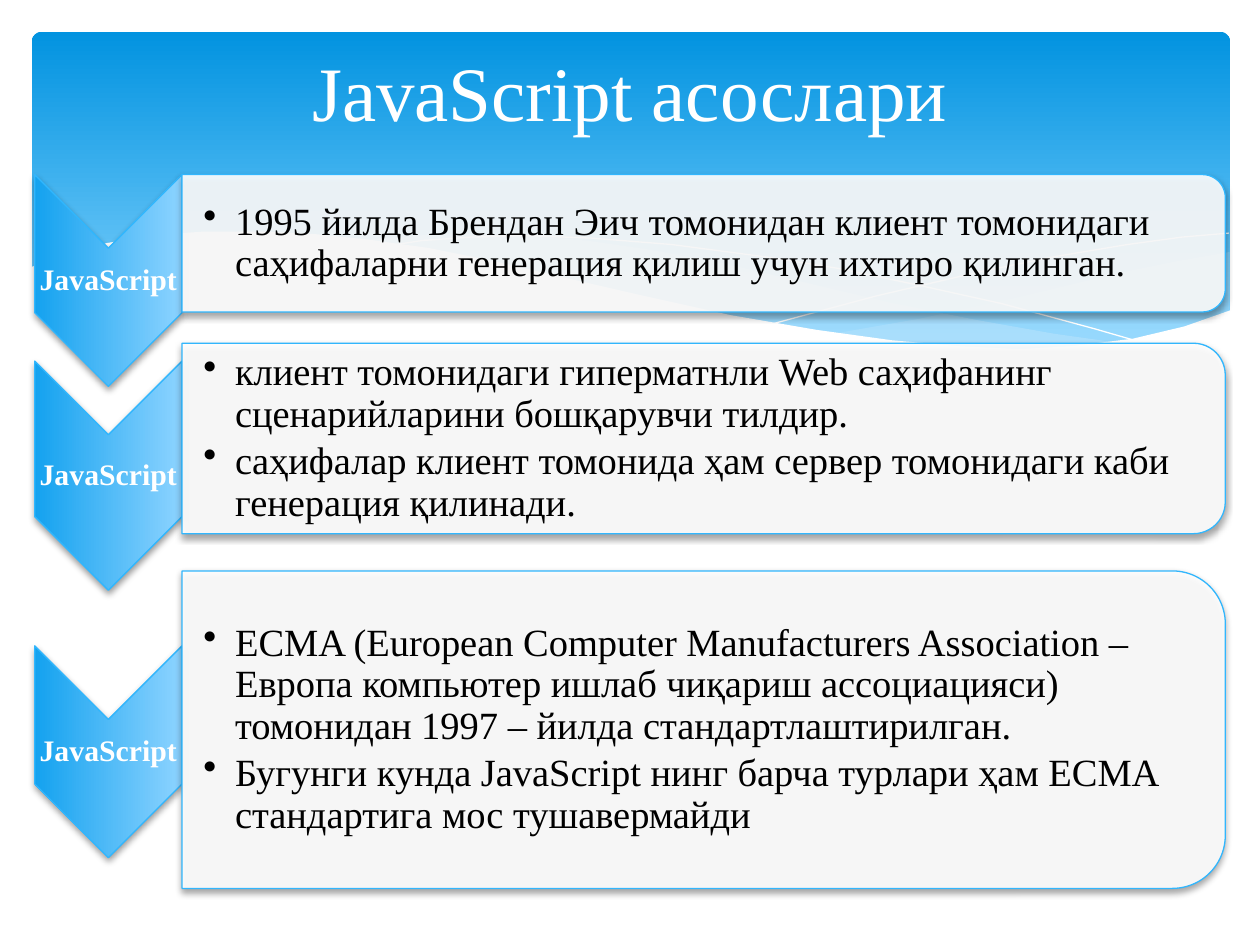
from dataclasses import dataclass

from lxml import etree
from pptx import Presentation
from pptx import util as u
from pptx.dml.color import RGBColor
from pptx.enum import shapes, text
from pptx.oxml.ns import qn

Cm, Pt = u.Cm, u.Pt


@dataclass(frozen=True)
class Theme:
    font: str = "Times New Roman"
    white: str = "FFFFFF"
    black: str = "000000"
    accent: str = "31B6FD"
    mist: str = "C6E7FC"
    banner: tuple = ("0293E0", "83D3FE")
    arrow: tuple = ("8CD3FF", "14A2EF")
    title_pt: int = 44
    body_pt: int = 22
    label_pt: int = 17


T = Theme()

# Banner curves, in tenths of a millimetre
RIGHT_CREST = [
    (2479, 508), (2375, 526), (2263, 549), (2045, 602), (1852, 643),
    (1679, 673), (1791, 688), (1923, 701), (2068, 706), (2192, 698),
    (2299, 683), (2393, 658), (2479, 627)]
MIDDLE_CREST = [
    (2268, 693), (2126, 673), (1968, 645), (1793, 610), (1598, 564),
    (1445, 528), (1306, 503), (1181, 485), (1067, 475), (917, 470),
    (795, 478), (726, 485), (869, 505), (1026, 536), (1247, 589),
    (1438, 630), (1610, 663), (1765, 686), (1933, 704), (2078, 706),
    (2177, 704)]
FALLING_LINE = [
    (785, 495), (851, 485), (950, 478), (1057, 475), (1191, 480),
    (1354, 493), (1544, 518), (1689, 541), (1847, 574), (2019, 612),
    (2207, 663), (2304, 691)]
RISING_LINE = [
    (1557, 653), (1765, 597), (1971, 549), (2123, 518), (2273, 493),
    (2383, 478), (2477, 470)]
WHITE_WAVE = [
    (2482, 625), (2388, 658), (2283, 683), (2159, 698), (2055, 704),
    (1933, 698), (1798, 686), (1646, 665), (1471, 635), (1278, 592),
    (1135, 559), (993, 526), (864, 500), (742, 483), (635, 472),
    (536, 467), (409, 467), (302, 475), (216, 490), (150, 505),
    (91, 526), (58, 541), (58, 836), (2482, 836)]

# Steps: chevron top and height, panel top and height (cm), bullets
STEPS = [
    (3.52, 4.27, 3.52, 2.77, [
        "1995 йилда Брендан Эич томонидан клиент томонидаги саҳифаларни "
        "генерация қилиш учун ихтиро қилинган."]),
    (7.28, 4.62, 6.92, 3.84, [
        "клиент томонидаги гиперматнли Web саҳифанинг сценарийларини "
        "бошқарувчи тилдир.",
        "cаҳифалар клиент томонида ҳам сервер томонидаги каби генерация "
        "қилинади."]),
    (13.02, 4.27, 11.51, 6.4, [
        "ECMA (European Computer Manufacturers Association –Европа компьютер "
        "ишлаб чиқариш ассоциацияси) томонидан 1997 – йилда "
        "стандартлаштирилган.",
        "Бугунги кунда JavaScript нинг барча турлари ҳам ECMA стандартига "
        "мос тушавермайди"]),
]
CHEVRON_X, CHEVRON_W = 0.7, 2.97
PANEL_X, PANEL_W = 3.67, 21.03


def rgb(color):
    return RGBColor.from_string(color)


def fill_solid(sp, color, alpha=100):
    sp.fill.solid()
    sp.fill.fore_color.rgb = rgb(color)
    if alpha < 100:
        clr = sp._element.spPr.find(".//" + qn("a:srgbClr"))
        etree.SubElement(clr, qn("a:alpha"), val=str(alpha * 1000))


def fill_gradient(sp, colors, end=1.0):
    sp.fill.gradient()
    sp.fill.gradient_angle = 270
    for stop, color, pos in zip(sp.fill.gradient_stops, colors, (0, end)):
        stop.color.rgb = rgb(color)
        stop.position = pos


def add_curve(s, points, color, alpha=100, closed=True):
    """Filled area when closed, hairline when open."""
    fb = s.shapes.build_freeform(*points[0], scale=Cm(0.01))
    fb.add_line_segments(points[1:], close=closed)
    sp = fb.convert_to_shape()
    sp.shadow.inherit = False
    if closed:
        fill_solid(sp, color, alpha)
        sp.line.fill.background()
    else:
        sp.fill.background()
        sp.line.color.rgb = rgb(color)
        sp.line.width = 0


def add_turned(s, kind, x, y, w, h):
    """Outlined, shadowed shape turned a quarter; x, y, w, h as seen."""
    sp = s.shapes.add_shape(kind, Cm(x + (w - h) / 2), Cm(y + (h - w) / 2),
                            Cm(h), Cm(w))
    sp.rotation = 90
    sp.line.color.rgb = rgb(T.accent)
    sp.line.width = Pt(0.75)
    sp.shadow.inherit = False
    effects = sp._element.spPr.find(qn("a:effectLst"))
    shadow = etree.SubElement(effects, qn("a:outerShdw"), blurRad=str(Pt(4)),
                              dist=str(Pt(2)), dir="5400000", rotWithShape="0")
    clr = etree.SubElement(shadow, qn("a:srgbClr"), val=T.black)
    etree.SubElement(clr, qn("a:alpha"), val="38000")
    return sp


def add_text(s, x, y, w, h, lines, size, color, bold=False, bullets=False,
             spacing=0.9, left=0.03, inset=0.03):
    tf = s.shapes.add_textbox(Cm(x), Cm(y), Cm(w), Cm(h)).text_frame
    tf.word_wrap = True
    tf.vertical_anchor = text.MSO_ANCHOR.MIDDLE
    tf.margin_left = Cm(left)
    tf.margin_right = tf.margin_top = tf.margin_bottom = Cm(inset)
    for i, line in enumerate(lines):
        p = tf.add_paragraph() if i else tf.paragraphs[0]
        if bullets:
            pPr = p._p.get_or_add_pPr()
            pPr.set("marL", str(Cm(0.64)))
            pPr.set("indent", str(-Cm(0.64)))
            etree.SubElement(pPr, qn("a:buChar"), char="•")
        else:
            p.alignment = text.PP_ALIGN.CENTER
        p.line_spacing = spacing
        if i < len(lines) - 1:
            p.space_after = Pt(0.15 * size)
        r = p.add_run()
        r.text = line
        r.font.name, r.font.size, r.font.bold = T.font, Pt(size), bold
        r.font.color.rgb = rgb(color)


def add_banner(s):
    sp = s.shapes.add_shape(shapes.MSO_SHAPE.ROUNDED_RECTANGLE,
                            Cm(0.64), Cm(0.64), Cm(24.16), Cm(6.86))
    sp.adjustments[0] = 0.03
    sp.shadow.inherit = False
    sp.line.fill.background()
    fill_gradient(sp, T.banner, 0.9)
    add_curve(s, RIGHT_CREST, T.mist, 29)
    add_curve(s, MIDDLE_CREST, T.mist, 40)
    for points in (FALLING_LINE, RISING_LINE):
        add_curve(s, points, T.white, closed=False)
    add_curve(s, WHITE_WAVE, T.white)


def add_step(s, chevron_y, chevron_h, panel_y, panel_h, bullets):
    # Chevron, its label below the notch
    sp = add_turned(s, shapes.MSO_SHAPE.CHEVRON,
                    CHEVRON_X, chevron_y, CHEVRON_W, chevron_h)
    fill_gradient(sp, T.arrow)
    add_text(s, CHEVRON_X, chevron_y + CHEVRON_W / 2, CHEVRON_W,
             chevron_h - CHEVRON_W, ["JavaScript"], T.label_pt, T.white,
             bold=True)
    # Panel, its text kept clear of the rounded corners
    sp = add_turned(s, shapes.MSO_SHAPE.ROUND_2_SAME_RECTANGLE,
                    PANEL_X, panel_y, PANEL_W, panel_h)
    fill_solid(sp, T.white, 90)
    corner = 0.05 * panel_h
    add_text(s, PANEL_X, panel_y + corner, PANEL_W - corner,
             panel_h - 2 * corner, bullets, T.body_pt, T.black,
             bullets=True, left=0.43, inset=0.04)


def main():
    prs = Presentation()
    prs.slide_width, prs.slide_height = Cm(25.4), Cm(19.05)
    s = prs.slides.add_slide(prs.slide_layouts[6])
    add_banner(s)
    add_text(s, 1.27, 0.73, 22.86, 2.18, ["JavaScript асослари"],
             T.title_pt, T.white, spacing=1.0)
    for step in STEPS:
        add_step(s, *step)
    prs.save("out.pptx")


if __name__ == "__main__":
    main()
